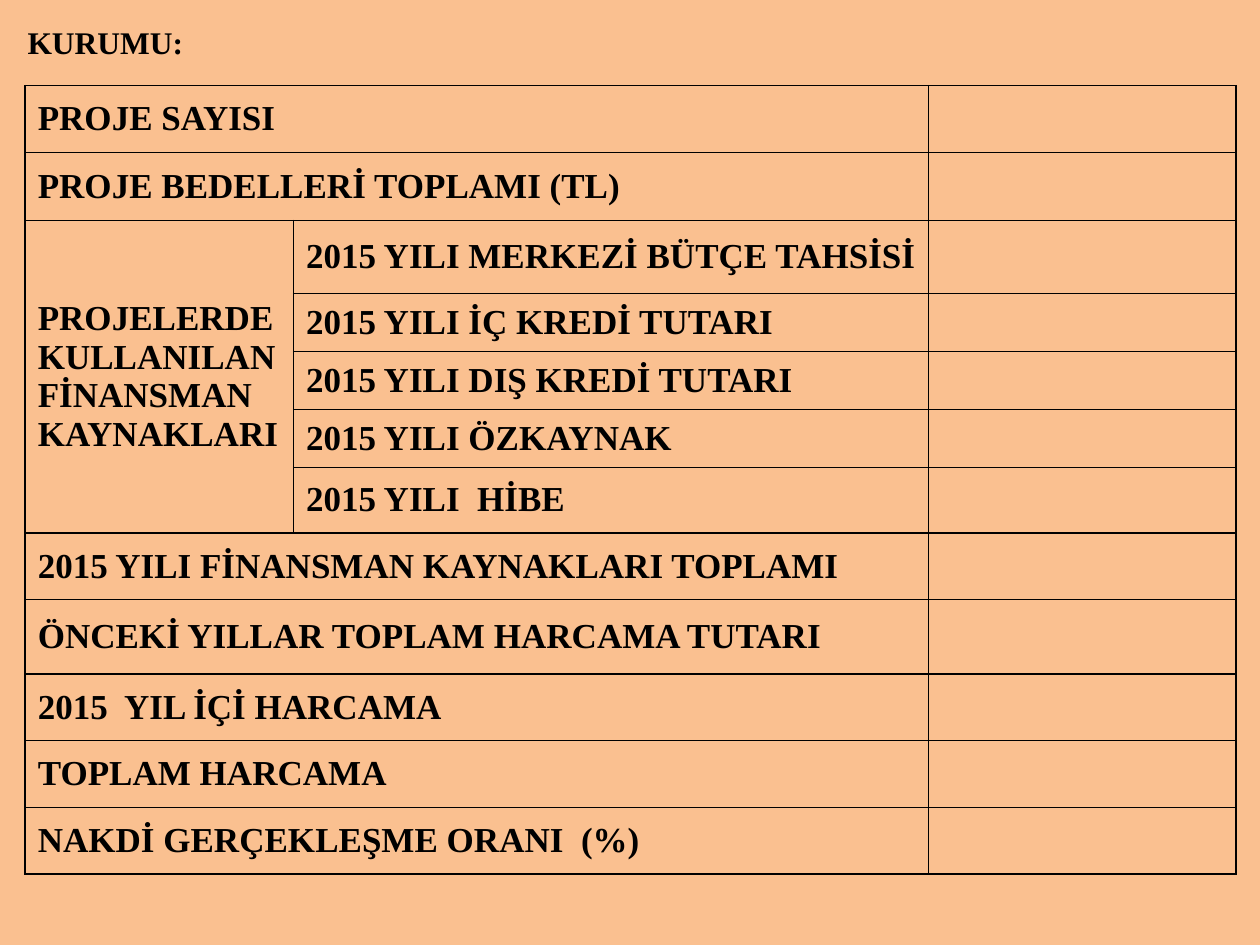
from dataclasses import dataclass

from lxml import etree
from pptx import Presentation
from pptx import util as u
from pptx.dml.color import RGBColor
from pptx.enum import text
from pptx.oxml import ns

PEACH = RGBColor(0xFA, 0xC0, 0x90)
BLACK = RGBColor(0, 0, 0)
FONT = "Times New Roman"
COLUMN_WIDTHS = (2.13, 5.04, 2.44)
VALUE_COLUMN = 2


@dataclass(frozen=True)
class Entry:
    label: str
    height: float = 0.53
    is_source: bool = False


SOURCES_HEADING = "PROJELERDE KULLANILAN FİNANSMAN KAYNAKLARI"
ENTRIES = (
    Entry("PROJE SAYISI"),
    Entry("PROJE BEDELLERİ TOPLAMI (TL)", 0.54),
    Entry("2015 YILI MERKEZİ BÜTÇE TAHSİSİ", 0.58, True),
    Entry("2015 YILI İÇ KREDİ TUTARI", 0.46, True),
    Entry("2015 YILI DIŞ KREDİ TUTARI", 0.46, True),
    Entry("2015 YILI ÖZKAYNAK", 0.46, True),
    Entry("2015 YILI  HİBE", 0.52, True),
    Entry("2015 YILI FİNANSMAN KAYNAKLARI TOPLAMI"),
    Entry("ÖNCEKİ YILLAR TOPLAM HARCAMA TUTARI", 0.59),
    Entry("2015  YIL İÇİ HARCAMA"),
    Entry("TOPLAM HARCAMA"),
    Entry("NAKDİ GERÇEKLEŞME ORANI  (%)"),
)


def add_bold_run(paragraph, words: str, size: int) -> None:
    run = paragraph.add_run()
    run.text = words
    run.font.name = FONT
    run.font.size = u.Pt(size)
    run.font.bold = True
    run.font.color.rgb = BLACK


def write_label(cell, words: str) -> None:
    cell.vertical_anchor = text.MSO_ANCHOR.MIDDLE
    add_bold_run(cell.text_frame.paragraphs[0], words, 20)


def style_cell(cell) -> None:
    """Clear the fill and rule all four sides; borders must precede the fill."""
    cell.fill.background()
    properties = cell._tc.get_or_add_tcPr()
    for position, side in enumerate(("lnL", "lnR", "lnT", "lnB")):
        border = etree.Element(ns.qn(f"a:{side}"), w=str(u.Pt(1)))
        fill = etree.SubElement(border, ns.qn("a:solidFill"))
        etree.SubElement(fill, ns.qn("a:srgbClr"), val=str(BLACK))
        properties.insert(position, border)


def add_budget_table(slide) -> None:
    table = slide.shapes.add_table(
        len(ENTRIES), len(COLUMN_WIDTHS), u.Inches(0.2), u.Inches(0.68),
        u.Inches(sum(COLUMN_WIDTHS)),
        u.Inches(sum(entry.height for entry in ENTRIES)),
    ).table
    table.first_row = table.horz_banding = False
    for column, width in zip(table.columns, COLUMN_WIDTHS):
        column.width = u.Inches(width)
    for cell in table.iter_cells():
        style_cell(cell)

    for index, entry in enumerate(ENTRIES):
        table.rows[index].height = u.Inches(entry.height)
        label_cell = table.cell(index, int(entry.is_source))
        if not entry.is_source:
            label_cell.merge(table.cell(index, VALUE_COLUMN - 1))
        write_label(label_cell, entry.label)

    source_rows = [i for i, entry in enumerate(ENTRIES) if entry.is_source]
    heading_cell = table.cell(source_rows[0], 0)
    heading_cell.merge(table.cell(source_rows[-1], 0))
    write_label(heading_cell, SOURCES_HEADING)


def add_institution_label(slide) -> None:
    box = slide.shapes.add_textbox(
        u.Inches(0.12), u.Inches(0.13), u.Inches(1.45), u.Inches(0.4))
    frame = box.text_frame
    frame.word_wrap = False
    frame.auto_size = text.MSO_AUTO_SIZE.SHAPE_TO_FIT_TEXT
    add_bold_run(frame.paragraphs[0], "KURUMU:", 18)


def main() -> None:
    deck = Presentation()
    deck.slide_width, deck.slide_height = u.Inches(10), u.Inches(7.5)
    slide = deck.slides.add_slide(deck.slide_layouts[6])
    slide.background.fill.solid()
    slide.background.fill.fore_color.rgb = PEACH
    add_budget_table(slide)
    add_institution_label(slide)
    deck.save("out.pptx")


if __name__ == "__main__":
    main()
